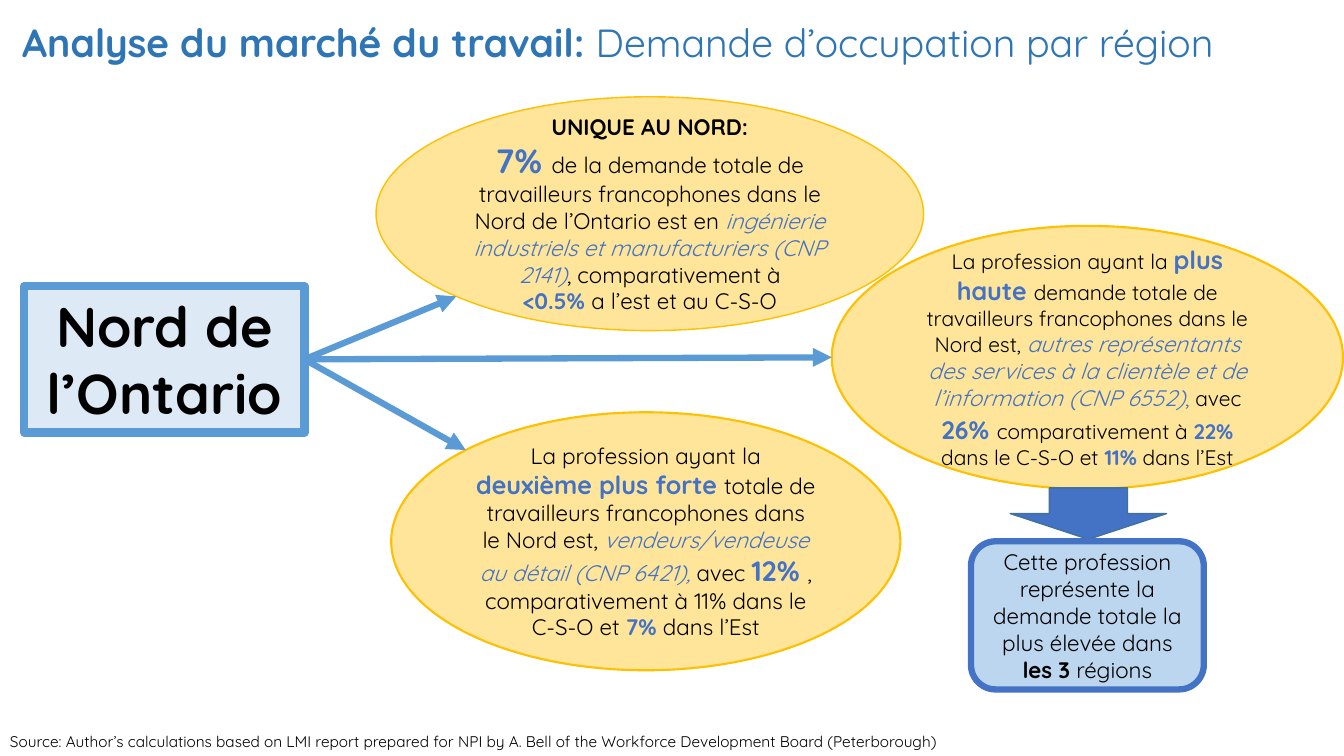
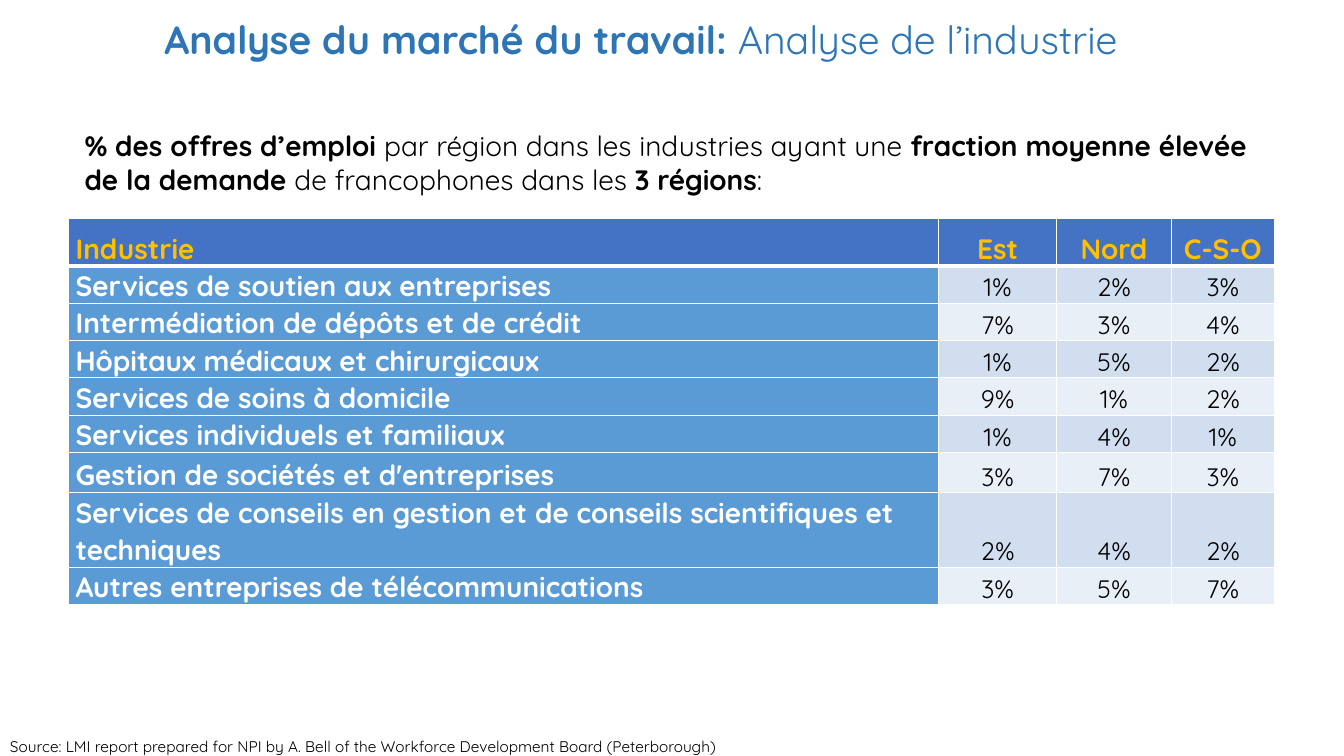
"""Build two slides on francophone labour demand in Ontario: by region and by industry."""
from math import cos, radians, sin

from lxml.etree import SubElement
from pptx import Presentation
from pptx.dml.color import RGBColor
from pptx.enum.shapes import MSO_CONNECTOR, MSO_SHAPE as SHAPE
from pptx.enum.text import MSO_ANCHOR as ANCHOR, MSO_AUTO_SIZE, PP_ALIGN as ALIGN
from pptx.oxml.ns import qn
from pptx.util import Inches, Pt

FONT = "Quicksand"
BLACK, WHITE, GOLD = "000000", "FFFFFF", "FFC000"
TITLE_BLUE, BLUE, SKY = "2E75B5", "4472C4", "5B9BD5"
BANDS = ["D0DEEF", "E9EFF7"]

STRONG = {"color": BLUE, "bold": True}
JOB = {"color": BLUE, "italic": True}
BOLD = {"bold": True}
SMALL = {"size": 15}

TITLE = "Analyse du marché du travail: "
SOURCE = "LMI report prepared for NPI by A. Bell of the Workforce Development Board (Peterborough)"

REGION = [[("Nord de l’Ontario", BOLD)]]
UNIQUE = [
    [("UNIQUE AU NORD:", BOLD)],
    [("7% ", {**STRONG, "size": 24}),
     ("de la demande totale de travailleurs francophones dans le Nord de l’Ontario est en ", {}),
     ("ingénierie industriels et manufacturiers (CNP 2141)", JOB),
     (", comparativement à", {})],
    [("<0.5% ", STRONG), ("a l’est et au C-S-O", {})],
]
HIGHEST = [[
    ("La profession ayant la ", SMALL),
    ("plus haute ", {**STRONG, "size": 18}),
    ("demande totale de travailleurs francophones dans le Nord est, ", SMALL),
    ("autres représentants des services à la clientèle et de l’information (CNP 6552)", JOB),
    (", ", {"color": BLUE}),
    ("avec ", SMALL),
    ("26%", {**STRONG, "size": 18}),
    (" ", {"size": 20}),
    ("comparativement à ", SMALL),
    ("22% ", {**STRONG, **SMALL}),
    ("dans le C-S-O et ", SMALL),
    ("11%", {**STRONG, **SMALL}),
    (" dans l’Est", SMALL),
]]
SECOND = [[
    ("La profession ayant la ", {}),
    ("deuxième plus forte ", {**STRONG, "size": 18}),
    ("totale de travailleurs francophones dans le Nord est, ", {}),
    ("vendeurs/vendeuse au détail (CNP 6421), ", JOB),
    ("avec ", {}),
    ("12% ", {**STRONG, "size": 20}),
    (", comparativement à 11% dans le C-S-O et ", {}),
    ("7% ", STRONG),
    ("dans l’Est", {}),
]]
ALL_REGIONS = [[
    ("Cette profession représente la demande totale la plus élevée dans ", {}),
    ("les 3 ", BOLD),
    ("régions", {}),
]]
BUBBLES = [
    (UNIQUE, (3.73, 0.96, 5.43, 2.32), 1, 3),
    (HIGHEST, (8.25, 2.24, 5.07, 2.61), 1.5, 2),
    (SECOND, (3.88, 4.09, 5.05, 2.56), 1.5, 1),
]

INTRO = [[
    ("% des offres d’emploi ", BOLD),
    ("par région dans les industries ayant une ", {}),
    ("fraction moyenne élevée de la demande ", BOLD),
    ("de francophones dans les ", {}),
    ("3 régions", BOLD),
    (":", {}),
]]
ROWS = [
    ("Industrie", "Est", "Nord", "C-S-O"),
    ("Services de soutien aux entreprises", "1%", "2%", "3%"),
    ("Intermédiation de dépôts et de crédit", "7%", "3%", "4%"),
    ("Hôpitaux médicaux et chirurgicaux", "1%", "5%", "2%"),
    ("Services de soins à domicile", "9%", "1%", "2%"),
    ("Services individuels et familiaux", "1%", "4%", "1%"),
    ("Gestion de sociétés et d'entreprises", "3%", "7%", "3%"),
    ("Services de conseils en gestion et de conseils scientifiques et techniques",
     "2%", "4%", "2%"),
    ("Autres entreprises de télécommunications", "3%", "5%", "7%"),
]
COL_WIDTHS = [8.63, 1.17, 1.14, 1.02]
ROW_HEIGHT = 0.37
TALL_ROWS = {0: 0.47, 6: 0.4, 7: 0.74}


def rgb(color):
    return RGBColor.from_string(color)


def inches(box):
    return [Inches(v) for v in box]


def style(font, size=16, color=BLACK, bold=False, italic=False):
    font.name, font.size, font.bold, font.italic = FONT, Pt(size), bold, italic
    font.color.rgb = rgb(color)


def write(tf, paragraphs, align=ALIGN.LEFT, anchor=ANCHOR.TOP, spacing=None, **base):
    tf.word_wrap = True
    tf.vertical_anchor = anchor
    for i, runs in enumerate(paragraphs):
        p = tf.paragraphs[0] if i == 0 else tf.add_paragraph()
        p.alignment = align
        if spacing:
            p.line_spacing = spacing
        for text, fmt in runs:
            r = p.add_run()
            r.text = text
            style(r.font, **{**base, **fmt})


def add_text(slide, box, paragraphs, **fmt):
    write(slide.shapes.add_textbox(*inches(box)).text_frame, paragraphs, **fmt)


def add_shape(slide, kind, box, fill, line, width, paragraphs=(), **fmt):
    sp = slide.shapes.add_shape(kind, *inches(box))
    sp.shadow.inherit = False
    sp.fill.solid()
    sp.fill.fore_color.rgb = rgb(fill)
    sp.line.color.rgb = rgb(line)
    sp.line.width = Pt(width)
    write(sp.text_frame, paragraphs, align=ALIGN.CENTER, **fmt)
    return sp


def add_arrow(slide, start, ellipse, site):
    """Join the right side of start to one of the eight sites of an ellipse."""
    cx = slide.shapes.add_connector(MSO_CONNECTOR.STRAIGHT, 0, 0, 0, 0)
    cx.begin_connect(start, 3)
    cx.end_connect(ellipse, site)
    angle = radians(45 * site)
    cx.end_x = int(ellipse.left + ellipse.width * (1 - sin(angle)) / 2)
    cx.end_y = int(ellipse.top + ellipse.height * (1 - cos(angle)) / 2)
    cx.line.color.rgb = rgb(SKY)
    cx.line.width = Pt(4.5)
    SubElement(cx.line._get_or_add_ln(), qn("a:tailEnd"), type="triangle")
    SubElement(cx._element.spPr, qn("a:effectLst"))


def new_slide(prs, subtitle, title_box, source, source_top):
    slide = prs.slides.add_slide(prs.slide_layouts[5])
    title = slide.shapes.title
    title.left, title.top, title.width, title.height = inches(title_box)
    title.text_frame.auto_size = MSO_AUTO_SIZE.NONE
    write(title.text_frame, [[(TITLE, BOLD), (subtitle, {})]], size=28, color=TITLE_BLUE)
    add_text(slide, (0, source_top, 13.05, 0.29), [[("Source: " + source, {})]], size=11)
    return slide


def format_cell(cell, text, fill, bottom, align, **fmt):
    cell.margin_left = cell.margin_right = Inches(0.07)
    cell.margin_top = cell.margin_bottom = 0
    tc_pr = cell._tc.get_or_add_tcPr()
    for side, width in (("L", 1), ("R", 1), ("T", 1), ("B", bottom)):
        ln = SubElement(tc_pr, qn("a:ln" + side), w=str(Pt(width)))
        SubElement(SubElement(ln, qn("a:solidFill")), qn("a:srgbClr"), val=WHITE)
    cell.fill.solid()
    cell.fill.fore_color.rgb = rgb(fill)
    write(cell.text_frame, [[(text, {})]], align=align, spacing=1.07, **fmt)
    cell.vertical_anchor = ANCHOR.BOTTOM


def add_industry_table(slide, left, top):
    heights = [TALL_ROWS.get(i, ROW_HEIGHT) for i in range(len(ROWS))]
    box = inches((left, top, sum(COL_WIDTHS), sum(heights)))
    table = slide.shapes.add_table(len(ROWS), len(COL_WIDTHS), *box).table
    table.horz_banding = False
    for col, width in zip(table.columns, COL_WIDTHS):
        col.width = Inches(width)
    for i, values in enumerate(ROWS):
        table.rows[i].height = Inches(heights[i])
        for j, text in enumerate(values):
            if i == 0:
                fill, fmt = BLUE, {"size": 20, "color": GOLD, "bold": True}
            elif j == 0:
                fill, fmt = SKY, {"size": 20, "color": WHITE, "bold": True}
            else:
                fill, fmt = BANDS[(i - 1) % 2], {"size": 18}
            format_cell(table.cell(i, j), text, fill, 1 if i else 3,
                        ALIGN.CENTER if j else ALIGN.LEFT, **fmt)


def region_slide(prs):
    slide = new_slide(prs, "Demande d’occupation par région", (0.12, 0.13, 12.81, 0.75),
                      "Author’s calculations based on " + SOURCE, 7.21)
    region = add_shape(slide, SHAPE.RECTANGLE, (0.24, 2.84, 2.78, 1.45),
                       "DDEAF6", SKY, 6, REGION, size=40)
    for paragraphs, box, width, site in BUBBLES:
        bubble = add_shape(slide, SHAPE.OVAL, box, "FEE599", GOLD, width,
                           paragraphs, anchor=ANCHOR.MIDDLE)
        add_arrow(slide, region, bubble, site)
    add_shape(slide, SHAPE.DOWN_ARROW, (10.02, 4.84, 1.55, 0.51), BLUE, "42719B", 1)
    add_shape(slide, SHAPE.ROUNDED_RECTANGLE, (9.63, 5.37, 2.31, 1.47),
              "BBD6EE", BLUE, 4.5, ALL_REGIONS, anchor=ANCHOR.MIDDLE)


def industry_slide(prs):
    slide = new_slide(prs, "Analyse de l’industrie", (1.53, 0.1, 9.99, 0.68), SOURCE, 7.26)
    add_text(slide, (0.74, 1.23, 11.84, 0.83), INTRO, size=20)
    add_industry_table(slide, 0.68, 2.17)


def main():
    prs = Presentation()
    prs.slide_width, prs.slide_height = inches((13.33, 7.5))
    region_slide(prs)
    industry_slide(prs)
    prs.save("out.pptx")


if __name__ == "__main__":
    main()
